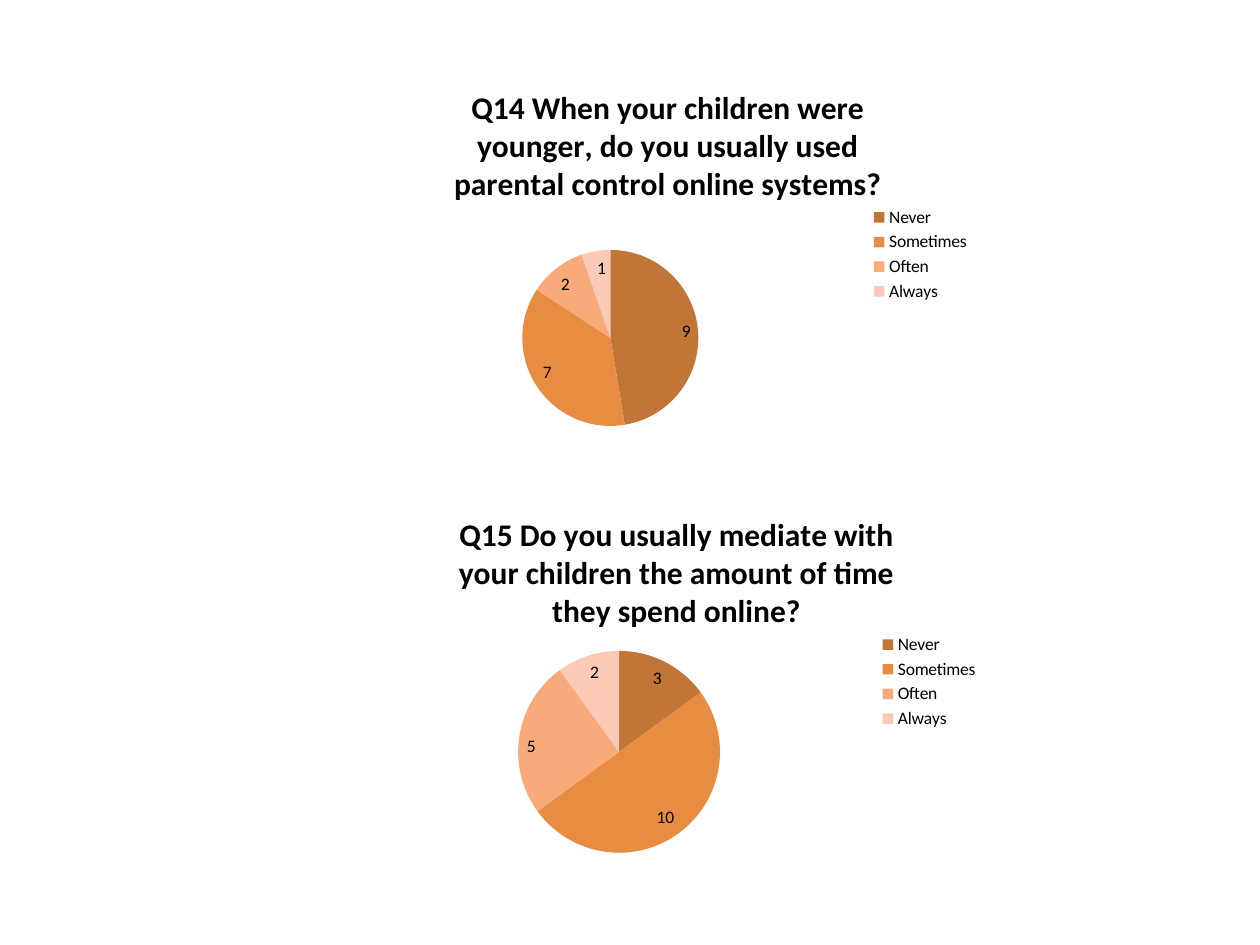
from lxml import etree
from pptx import Presentation
from pptx.chart.data import CategoryChartData
from pptx.dml.color import RGBColor
from pptx.enum import chart as c
from pptx.oxml import ns
from pptx.util import Pt

COLORS = {
    "Never": "C07636",
    "Sometimes": "E88C41",
    "Often": "F8AA7A",
    "Always": "FACAB6",
    "text": "000000",
}
ANSWERS = ["Never", "Sometimes", "Often", "Always"]
CHART_WIDTH, CHART_HEIGHT = 360, 216
PIE_CENTER_X = 147.2

# question, answer counts, chart left and top, pie diameter and centre height
QUESTIONS = [
    ("Q14 When your children were younger, do you usually used parental control online systems?",
     (9, 7, 2, 1), 201.6, 37.4, 100.6, 155.8),
    ("Q15 Do you usually mediate with your children the amount of time they spend online?",
     (3, 10, 5, 2), 206.6, 281.5, 115.4, 148.2),
]


def place_pie(chart, diameter, center_y):
    """Fix the inner plot area as a square inside the chart frame."""
    area = chart.plots._plotArea if hasattr(chart.plots, "_plotArea") else None
    area = chart.element.find(".//" + ns.qn("c:plotArea")) if area is None else area
    for old in area.findall(ns.qn("c:layout")):
        area.remove(old)
    layout = etree.Element(ns.qn("c:layout"))
    area.insert(0, layout)
    manual = etree.SubElement(layout, ns.qn("c:manualLayout"))
    settings = {
        "layoutTarget": "inner",
        "xMode": "edge",
        "yMode": "edge",
        "x": (PIE_CENTER_X - diameter / 2) / CHART_WIDTH,
        "y": (center_y - diameter / 2) / CHART_HEIGHT,
        "w": diameter / CHART_WIDTH,
        "h": diameter / CHART_HEIGHT,
    }
    for name, value in settings.items():
        etree.SubElement(manual, ns.qn("c:" + name)).set("val", str(value))


deck = Presentation()
deck.slide_width, deck.slide_height = Pt(720), Pt(540)
page = deck.slides.add_slide(deck.slide_layouts[6])

for question, counts, left, top, diameter, center_y in QUESTIONS:
    data = CategoryChartData()
    data.categories = ANSWERS
    data.add_series("Series 1", counts)
    chart = page.shapes.add_chart(c.XL_CHART_TYPE.PIE, Pt(left), Pt(top),
                                  Pt(CHART_WIDTH), Pt(CHART_HEIGHT), data).chart
    chart.font.name = "Calibri"
    chart.font.size = Pt(10)
    chart.font.color.rgb = RGBColor.from_string(COLORS["text"])

    chart.has_title = True
    span = chart.chart_title.text_frame.paragraphs[0].add_run()
    span.text = question
    span.font.name = "Calibri"
    span.font.size = Pt(18)
    span.font.bold = True
    span.font.color.rgb = RGBColor.from_string(COLORS["text"])
    chart.chart_title.include_in_layout = False

    chart.has_legend = True
    chart.legend.position = c.XL_LEGEND_POSITION.RIGHT
    chart.legend.include_in_layout = False

    plot = chart.plots[0]
    plot.vary_by_categories = True
    plot.has_data_labels = True
    plot.data_labels.show_value = True
    plot.data_labels.show_percentage = False
    plot.data_labels.position = c.XL_LABEL_POSITION.INSIDE_END
    for index, answer in enumerate(ANSWERS):
        fill = plot.series[0].points[index].format.fill
        fill.solid()
        fill.fore_color.rgb = RGBColor.from_string(COLORS[answer])
    place_pie(chart, diameter, center_y)

deck.save("out.pptx")
